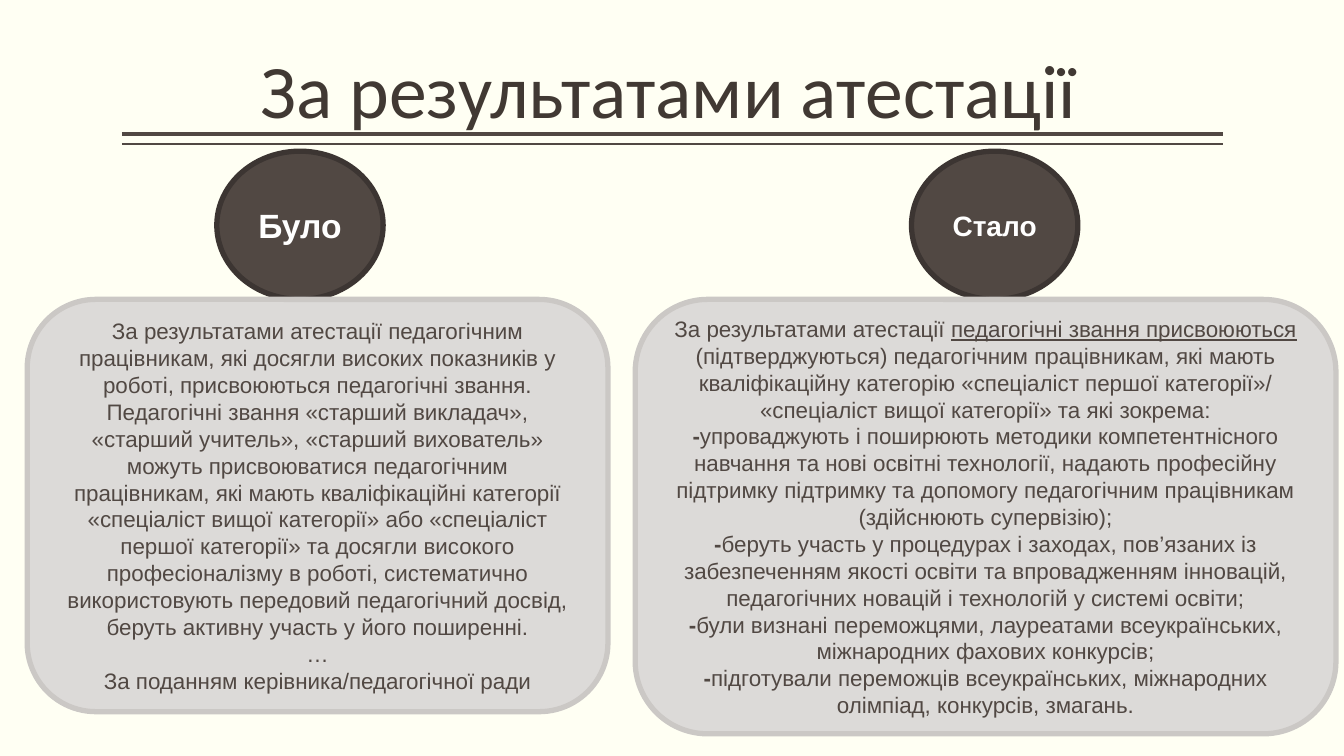
import pptx
import pptx.util
import pptx.dml.color
import pptx.enum.shapes
import pptx.enum.text
import pptx.oxml

SCALE = 9144  # EMU in one px, 100 px to the inch
KIND = pptx.enum.shapes.MSO_SHAPE
ANCHOR = pptx.enum.text.MSO_ANCHOR
CENTER = pptx.enum.text.PP_ALIGN.CENTER

DARK = "514843"
TITLE = {"size": 54, "name": "Calibri", "color": "413933"}
BODY = {"size": 16, "name": "Arial", "color": DARK}
HEAD = {"name": "Arial", "color": "FFFFFF", "bold": True}
DISC = {"fill": DARK, "line": "3C3532"}
PANEL = {"fill": "DCDAD8", "line": "CBC8C5"}

# Each paragraph is a list of (text, format) runs
BEFORE = [
    [("За результатами атестації педагогічним працівникам, які досягли "
      "високих показників у роботі, присвоюються педагогічні звання. "
      "Педагогічні звання «старший викладач», «старший учитель», "
      "«старший вихователь» можуть присвоюватися педагогічним "
      "працівникам, які мають кваліфікаційні категорії «спеціаліст вищої "
      "категорії» або «спеціаліст першої категорії» та досягли високого "
      "професіоналізму в роботі, систематично використовують передовий "
      "педагогічний досвід, беруть активну участь у його поширенні.", {})],
    [("…", {})],
    [("За поданням керівника/педагогічної ради", {})],
]
MERITS = [
    "упроваджують і поширюють методики компетентнісного навчання та нові "
    "освітні технології, надають професійну підтримку підтримку та "
    "допомогу педагогічним працівникам (здійснюють супервізію);",
    "беруть участь у процедурах і заходах, пов’язаних із забезпеченням "
    "якості освіти та впровадженням інновацій, педагогічних новацій і "
    "технологій у системі освіти;",
    "були визнані переможцями, лауреатами всеукраїнських, міжнародних "
    "фахових конкурсів;",
    "підготували переможців всеукраїнських, міжнародних олімпіад, "
    "конкурсів, змагань.",
]
AFTER = [
    [("За результатами атестації ", {}),
     ("педагогічні звання присвоюються ", {"underline": True}),
     ("(підтверджуються) педагогічним працівникам, які мають "
      "кваліфікаційну категорію «спеціаліст першої категорії»/ "
      "«спеціаліст вищої категорії» та які зокрема:", {})],
] + [[("-", {"bold": True}), (merit, {})] for merit in MERITS]


def px(*nums):
    return [pptx.util.Emu(num * SCALE) for num in nums]


def rgb(code):
    return pptx.dml.color.RGBColor.from_string(code)


def style(font, form):
    for key, value in form.items():
        if key == "color":
            font.color.rgb = rgb(value)
        elif key == "size":
            font.size = pptx.util.Pt(value)
        else:
            setattr(font, key, value)


def write(frame, paras, form, anchor=ANCHOR.MIDDLE, space=1.0):
    frame.word_wrap = True
    frame.vertical_anchor = anchor
    for num, runs in enumerate(paras):
        para = frame.add_paragraph() if num else frame.paragraphs[0]
        para.alignment = CENTER
        para.line_spacing = space
        for text, extra in runs:
            run = para.add_run()
            run.text = text
            style(run.font, {**form, **extra})


def add_rule(slide, top, width):
    ends = px(121, top, 1213, top)
    rule = slide.shapes.add_connector(
        pptx.enum.shapes.MSO_CONNECTOR.STRAIGHT, *ends)
    rule.line.color.rgb = rgb(DARK)
    rule.line.width = pptx.util.Pt(width)
    props = rule._element.spPr
    props.append(pptx.oxml.parse_xml(
        '<a:effectLst xmlns:a='
        '"http://schemas.openxmlformats.org/drawingml/2006/main"/>'))


def add_title(slide, text):
    box = slide.shapes.add_textbox(*px(84, 35, 1158, 104))
    frame = box.text_frame
    frame.margin_left = frame.margin_right = 0
    write(frame, [[(text, {})]], TITLE, ANCHOR.BOTTOM, 0.9)


def add_block(slide, kind, place, paint, paras, form):
    block = slide.shapes.add_shape(kind, *px(*place))
    block.shadow.inherit = False
    block.fill.solid()
    block.fill.fore_color.rgb = rgb(paint["fill"])
    block.line.color.rgb = rgb(paint["line"])
    block.line.width = pptx.util.Pt(3.78)
    write(block.text_frame, paras, form)


def main():
    deck = pptx.Presentation()
    deck.slide_width, deck.slide_height = px(1333, 750)
    slide = deck.slides.add_slide(deck.slide_layouts[6])
    slide.background.fill.solid()
    slide.background.fill.fore_color.rgb = rgb("FFFFF3")

    # Title over a double rule
    add_rule(slide, 133, 3)
    add_rule(slide, 143, 1)
    add_title(slide, "За результатами атестації")

    # Column heads
    for left, text, size in ((215, "Було", 24), (904, "Стало", 20)):
        add_block(slide, KIND.OVAL, (left, 150, 165, 147), DISC,
                  [[(text, {})]], {**HEAD, "size": size})

    # Column panels
    for left, width, height, paras in ((27, 576, 409, BEFORE),
                                       (630, 695, 431, AFTER)):
        add_block(slide, KIND.ROUNDED_RECTANGLE, (left, 297, width, height),
                  PANEL, paras, BODY)

    deck.save("out.pptx")


if __name__ == "__main__":
    main()
